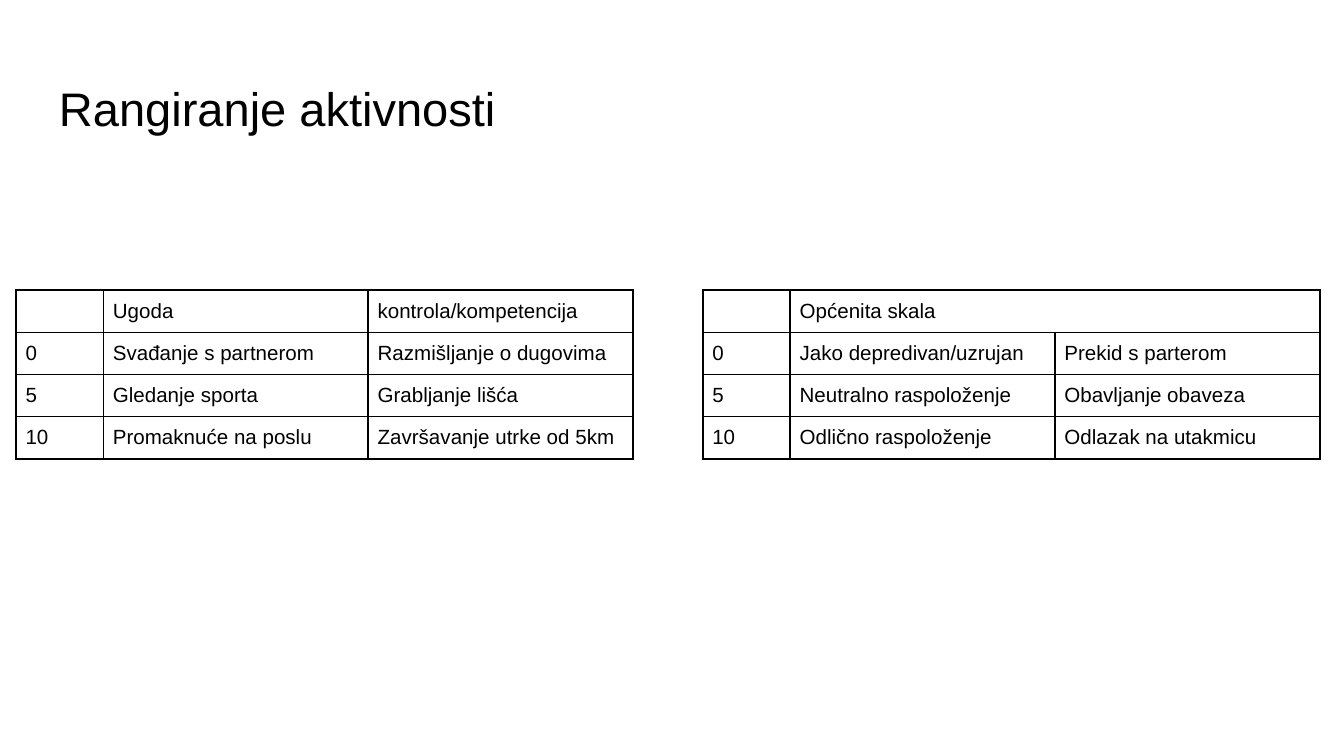
import pptx
import pptx.dml.color
import pptx.enum.text
import pptx.util
from lxml import etree
from pptx.oxml.ns import qn

Inches = pptx.util.Inches
Pt = pptx.util.Pt
BLACK = pptx.dml.color.RGBColor(0x00, 0x00, 0x00)
FONT = "Arial"

# Content
TITLE = "Rangiranje aktivnosti"
ACTIVITY_SCALE = [
    ("", "Ugoda", "kontrola/kompetencija"),
    ("0", "Svađanje s partnerom", "Razmišljanje o dugovima"),
    ("5", "Gledanje sporta", "Grabljanje lišća"),
    ("10", "Promaknuće na poslu", "Završavanje utrke od 5km"),
]
GENERAL_SCALE = [
    ("", "Općenita skala", None),  # None: covered by the cell to its left
    ("0", "Jako depredivan/uzrujan", "Prekid s parterom"),
    ("5", "Neutralno raspoloženje", "Obavljanje obaveza"),
    ("10", "Odlično raspoloženje", "Odlazak na utakmicu"),
]
TABLES = [(0.12, ACTIVITY_SCALE), (5.23, GENERAL_SCALE)]

# Layout, in inches
PAGE_WIDTH = 10
PAGE_HEIGHT = PAGE_WIDTH * 9 / 16
TABLE_TOP = 2.16
COLUMN_WIDTHS = (0.65, 1.97, 1.97)
ROW_HEIGHT = 0.31
CELL_MARGIN = 0.07
CELL_MARGIN_BOTTOM = 0.06
TITLE_MARGIN = 0.1

# Text and lines, in points
TITLE_SIZE = 25.2
TEXT_SIZE = 11
BORDER_WIDTH = 1


def set_font(paragraph, size):
    paragraph.font.name = FONT
    paragraph.font.size = Pt(size)
    paragraph.font.color.rgb = BLACK


def set_margins(target, margin, bottom):
    target.margin_left = target.margin_right = Inches(margin)
    target.margin_top = Inches(margin)
    target.margin_bottom = Inches(bottom)


def add_borders(cell):
    properties = cell._tc.get_or_add_tcPr()
    for position, side in enumerate(("lnL", "lnR", "lnT", "lnB")):
        line = etree.Element(qn(f"a:{side}"), w=str(Pt(BORDER_WIDTH)))
        fill = etree.SubElement(line, qn("a:solidFill"))
        etree.SubElement(fill, qn("a:srgbClr"), val=str(BLACK))
        properties.insert(position, line)


def add_scale(page, left, rows):
    frame = page.shapes.add_table(
        len(rows), len(COLUMN_WIDTHS), Inches(left), Inches(TABLE_TOP),
        Inches(sum(COLUMN_WIDTHS)), Inches(ROW_HEIGHT * len(rows)))
    table = frame.table
    table.first_row = table.horz_banding = False
    for column, width in zip(table.columns, COLUMN_WIDTHS):
        column.width = Inches(width)
    for row_index, texts in enumerate(rows):
        table.rows[row_index].height = Inches(ROW_HEIGHT)
        for column_index, text in enumerate(texts):
            cell = table.cell(row_index, column_index)
            cell.fill.background()
            set_margins(cell, CELL_MARGIN, CELL_MARGIN_BOTTOM)
            add_borders(cell)
            paragraph = cell.text_frame.paragraphs[0]
            set_font(paragraph, TEXT_SIZE)
            if text:
                paragraph.text = text
            else:  # keeps an empty cell from stretching its row
                end = etree.SubElement(paragraph._p, qn("a:endParaRPr"))
                end.set("sz", str(TEXT_SIZE * 100))
            if text is None:
                table.cell(row_index, column_index - 1).merge(cell)


deck = pptx.Presentation()
deck.slide_width, deck.slide_height = Inches(PAGE_WIDTH), Inches(PAGE_HEIGHT)
page = deck.slides.add_slide(deck.slide_layouts[6])

# Title
box = page.shapes.add_textbox(Inches(0.34), Inches(0.49), Inches(9.32), Inches(0.63))
title = box.text_frame
title.word_wrap = True
title.vertical_anchor = pptx.enum.text.MSO_ANCHOR.MIDDLE
set_margins(title, TITLE_MARGIN, TITLE_MARGIN)
title.text = TITLE
set_font(title.paragraphs[0], TITLE_SIZE)

# Two rating scales side by side
for left, rows in TABLES:
    add_scale(page, left, rows)

deck.save("out.pptx")
